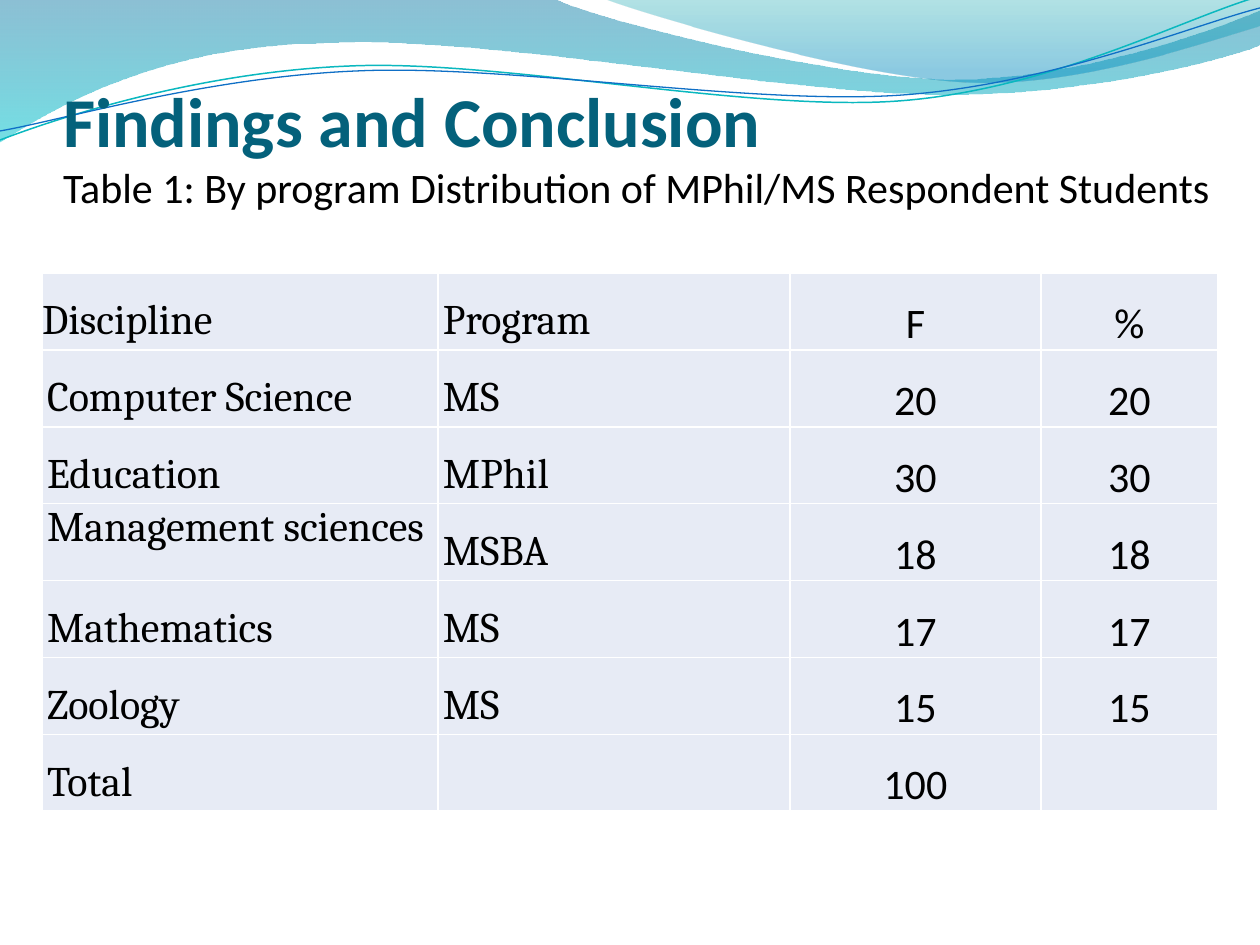
from lxml import etree
from pptx import Presentation
from pptx.dml.color import RGBColor
from pptx.enum.text import MSO_ANCHOR, MSO_AUTO_SIZE, PP_ALIGN
from pptx.oxml.ns import qn
from pptx.util import Pt

EMU_PER_PX = 914400 / 126
TITLE_ONLY = 5
LEFT, CENTER = PP_ALIGN.LEFT, PP_ALIGN.CENTER
TOP, BOTTOM = MSO_ANCHOR.TOP, MSO_ANCHOR.BOTTOM
NO_AUTOFIT = MSO_AUTO_SIZE.NONE
SANS, SERIF = "Calibri", "Cambria"
COLORS = {
    "title": "04617B", "text": "000000", "cell": "E7EBF5", "border": "FFFFFF",
    "wave_top": "0074A1", "wave_bottom": "00C6CF",
    "crest_top": "00A1A9", "crest_bottom": "008BBF",
    "teal_line": "0AB8BF", "blue_line": "0F6FC6",
}

# Outlines in px: a pair is a straight segment, six numbers are a cubic curve.
WAVE = [(0, 0), (554, -1), (600, 21, 837, 79, 955, 79), (1075, 79, 1207, 33, 1260, 11),
        (1261, 45), (1238, 55, 1096, 96, 940, 94), (784, 94, 481, 35, 324, 43),
        (163, 45, 58, 105, -1, 142)]
CREST = [(604, -1), (641, 14, 859, 78, 969, 82), (1079, 87, 1211, 40, 1260, 26), (1260, 0)]
TEAL_LINE = [(0, 140), (60, 117, 199, 72, 349, 66), (498, 59, 747, 112, 898, 101),
             (1049, 90, 1182, 19, 1257, -3)]
BLUE_LINE = [(0, 131), (59, 121, 207, 77, 357, 71), (508, 64, 752, 106, 903, 95),
             (1053, 84, 1190, 26, 1260, 8)]

COLUMNS = [396, 352, 251, 177]
ROW_HEIGHT = 73
ROWS = [
    ("Discipline", "Program", "F", "%"),
    ("Computer Science", "MS", "20", "20"),
    ("Education", "MPhil", "30", "30"),
    ("Management sciences", "MSBA", "18", "18"),
    ("Mathematics", "MS", "17", "17"),
    ("Zoology", "MS", "15", "15"),
    ("Total", "", "100", ""),
]


def px(n):
    return round(n * EMU_PER_PX)


def rgb(name):
    return RGBColor.from_string(COLORS[name])


class SlideBuilder:
    def __init__(self, s):
        self.s = s

    def run(self, p, text, size, color="text", font=SANS, bold=False):
        r = p.add_run()
        r.text = text
        r.font.size, r.font.name, r.font.bold = Pt(size), font, bold
        r.font.color.rgb = rgb(color)

    def freeform(self, outline, close):
        """Build the outline through all its points, then merge each curve's three."""
        points = [(px(seg[i]), px(seg[i + 1])) for seg in outline for i in range(0, len(seg), 2)]
        builder = self.s.shapes.build_freeform(*points[0])
        builder.add_line_segments(points[1:], close=close)
        sp = builder.convert_to_shape()
        sp.shadow.inherit = False
        lines = iter(list(sp.element.spPr.iter(qn("a:lnTo"))))
        for segment in outline[1:]:
            first = next(lines)
            if len(segment) == 6:
                curve = etree.Element(qn("a:cubicBezTo"))
                first.addprevious(curve)
                for line in (first, next(lines), next(lines)):
                    curve.append(line[0])
                    line.getparent().remove(line)
        return sp

    def wave(self, outline, stops):
        """Draw a closed outline; stops are (position, colour, opacity percent)."""
        sp = self.freeform(outline, True)
        sp.line.fill.background()
        sp.fill.gradient()
        sp.fill.gradient_angle = 270
        for stop, (position, color, _) in zip(sp.fill.gradient_stops, stops):
            stop.position = position
            stop.color.rgb = rgb(color)
        for clr, (_, _, opacity) in zip(sp.element.spPr.iter(qn("a:srgbClr")), stops):
            etree.SubElement(clr, qn("a:alpha"), val=str(opacity * 1000))

    def curve(self, outline, color, width):
        sp = self.freeform(outline, False)
        sp.fill.background()
        sp.line.color.rgb = rgb(color)
        sp.line.width = Pt(width)

    def title(self, x, y, w, h, title, subtitle):
        sp = self.s.shapes.title
        sp.left, sp.top, sp.width, sp.height = px(x), px(y), px(w), px(h)
        sp.element.getparent().append(sp.element)  # in front of the waves
        tf = sp.text_frame
        tf.word_wrap, tf.auto_size, tf.vertical_anchor = True, NO_AUTOFIT, BOTTOM
        tf.margin_left = tf.margin_right = 0
        tf.margin_top, tf.margin_bottom = px(6), px(50)
        p = tf.paragraphs[0]
        p.alignment = LEFT
        self.run(p, title, 40, "title", bold=True)
        p.add_line_break()
        self.run(p, subtitle, 24)

    def cell(self, cell, text, font, align, indent, spacing, anchor):
        cell.margin_left = cell.margin_right = cell.margin_top = cell.margin_bottom = 0
        cell.vertical_anchor = anchor
        tcPr = cell._tc.get_or_add_tcPr()
        for side in ("lnL", "lnR", "lnT", "lnB"):
            ln = etree.SubElement(tcPr, qn(f"a:{side}"), w=str(Pt(1)))
            fill = etree.SubElement(ln, qn("a:solidFill"))
            etree.SubElement(fill, qn("a:srgbClr"), val=COLORS["border"])
        cell.fill.solid()
        cell.fill.fore_color.rgb = rgb("cell")
        if text:
            p = cell.text_frame.paragraphs[0]
            p.alignment, p.line_spacing = align, spacing
            pPr = p._p.get_or_add_pPr()
            for side in ("marL", "marR"):
                pPr.set(side, str(px(indent)))
            self.run(p, text, 24, font=font)

    def table(self, x, y, columns, row_height, rows):
        table = self.s.shapes.add_table(len(rows), len(columns), px(x), px(y),
                                        px(sum(columns)), px(row_height * len(rows))).table
        table.first_row = table.horz_banding = False
        for column, width in zip(table.columns, columns):
            column.width = px(width)
        for i, row in enumerate(rows):
            for j, text in enumerate(row):
                number = j >= 2
                self.cell(table.cell(i, j), text,
                          font=SANS if number else SERIF,
                          align=CENTER if number else LEFT,
                          indent=0 if i == j == 0 else 5,
                          spacing=1.0 if text == "Management sciences" else 1.5,
                          anchor=BOTTOM if number and i == 0 else TOP)


def main():
    prs = Presentation()
    prs.slide_width, prs.slide_height = px(1260), px(945)
    slide = SlideBuilder(prs.slides.add_slide(prs.slide_layouts[TITLE_ONLY]))
    slide.wave(WAVE, [(0, "wave_top", 45), (1, "wave_bottom", 55)])
    slide.wave(CREST, [(0, "crest_top", 30), (0.8, "crest_bottom", 45)])
    slide.curve(TEAL_LINE, "teal_line", 0.85)
    slide.curve(BLUE_LINE, "blue_line", 0.75)
    slide.title(63, 157, 1175, 105, "Findings and Conclusion",
                "Table 1: By program Distribution of MPhil/MS Respondent Students")
    slide.table(42, 273, COLUMNS, ROW_HEIGHT, ROWS)
    prs.save("out.pptx")


if __name__ == "__main__":
    main()
